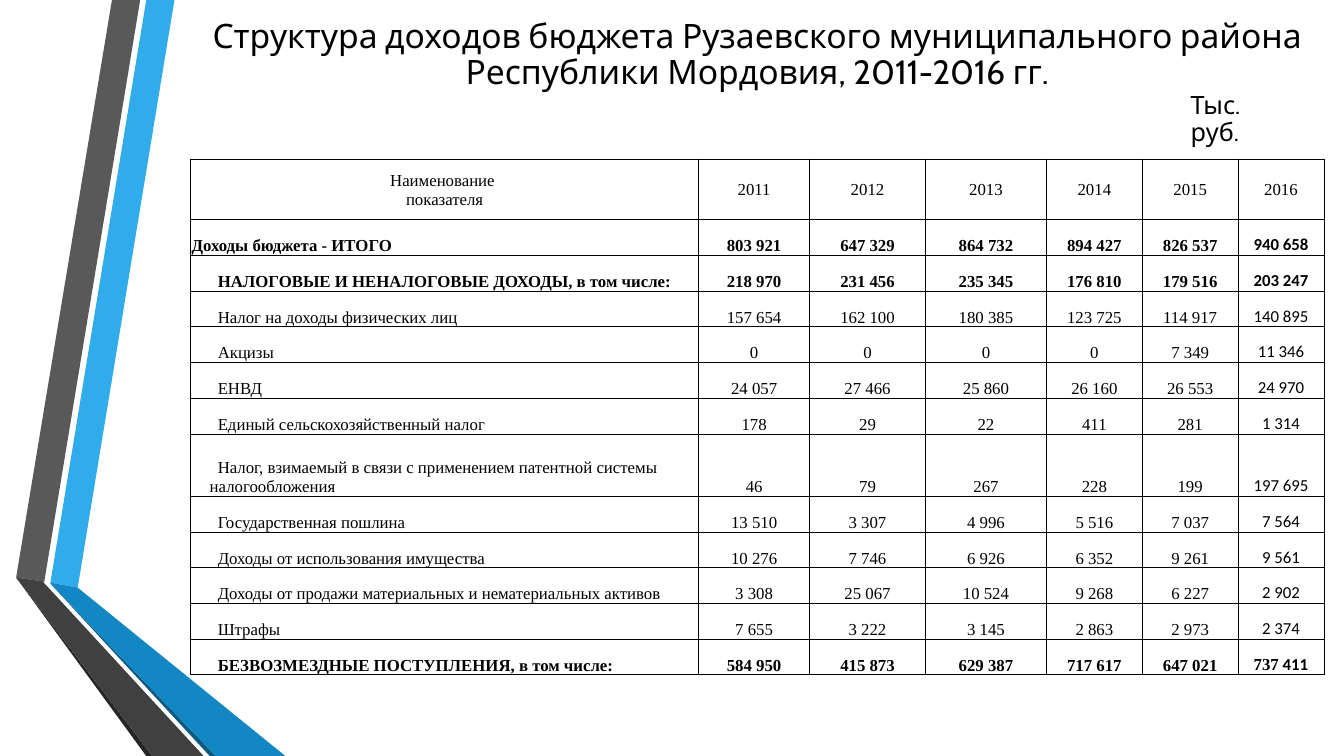
from lxml import etree
from pptx import Presentation
from pptx import util as u
from pptx.dml.color import RGBColor
from pptx.enum import text
from pptx.oxml import ns

# Lengths are columns and rows of a 100 x 100 grid laid over the slide
LEFT, WIDTH = 14.18, 84.32
BLACK = "000000"
SERIF, SANS, TITLE_FONT = "Times New Roman", "Calibri", "Cabin"

RIBBONS = [
    ("30ACEC", [(3.75, 77.07), (5.78, 77.73), (12.98, 0), (10.88, 0)]),
    ("595959", [(10.43, 0), (8.33, 0), (1.2, 76.4), (3.3, 76.93)]),
    ("262626", [(1.2, 76.4), (10.88, 100), (11.33, 100)]),
    ("0C5A82", [(3.75, 77.2), (15.6, 100), (16.05, 100)]),
    ("1287C3", [(3.75, 77.2), (16.05, 100), (21.23, 100), (5.78, 77.73), (3.75, 77.07)]),
    ("404040", [(15.15, 100), (3.6, 77.73), (3.23, 77.07), (3.3, 76.93), (1.2, 76.4), (11.33, 100)]),
]

YEARS = ["2011", "2012", "2013", "2014", "2015", "2016"]
TOTAL = "Доходы бюджета - ИТОГО"
TAXES = "НАЛОГОВЫЕ И НЕНАЛОГОВЫЕ ДОХОДЫ, в том числе:"
PATENT = "Налог, взимаемый в связи с применением патентной системы налогообложения"
GRANTS = "БЕЗВОЗМЕЗДНЫЕ ПОСТУПЛЕНИЯ, в том числе:"
INCOME = [
    (TOTAL, "803 921|647 329|864 732|894 427|826 537|940 658"),
    (TAXES, "218 970|231 456|235 345|176 810|179 516|203 247"),
    ("Налог на доходы физических лиц", "157 654|162 100|180 385|123 725|114 917|140 895"),
    ("Акцизы", "0|0|0|0|7 349|11 346"),
    ("ЕНВД", "24 057|27 466|25 860|26 160|26 553|24 970"),
    ("Единый сельскохозяйственный налог", "178|29|22|411|281|1 314"),
    (PATENT, "46|79|267|228|199|197 695"),
    ("Государственная пошлина", "13 510|3 307|4 996|5 516|7 037|7 564"),
    ("Доходы от использования имущества", "10 276|7 746|6 926|6 352|9 261|9 561"),
    ("Доходы от продажи материальных и нематериальных активов",
     "3 308|25 067|10 524|9 268|6 227|2 902"),
    ("Штрафы", "7 655|3 222|3 145|2 863|2 973|2 374"),
    (GRANTS, "584 950|415 873|629 387|717 617|647 021|737 411"),
]
COLUMNS = [37.81, 8.25, 8.63, 9, 7.13, 7.13, 6.38]
HEADER_ROW, PLAIN_ROW, TALL_ROW = 8, 4.72, 8.27


def color(value):
    return RGBColor.from_string(value)


class SlideBuilder:
    def __init__(self, deck):
        self.column = deck.slide_width / 100
        self.row = deck.slide_height / 100
        self.page = deck.slides.add_slide(deck.slide_layouts[5])

    def x(self, columns):
        return u.Emu(round(columns * self.column))

    def y(self, rows):
        return u.Emu(round(rows * self.row))

    def area(self, left, top, width, height):
        return self.x(left), self.y(top), self.x(width), self.y(height)

    def span(self, para, words, size, font, bold=False):
        span = para.add_run()
        span.text = words
        span.font.size = u.Pt(size)
        span.font.name = font
        span.font.bold = bold
        span.font.color.rgb = color(BLACK)

    def ribbon(self, group, fill, points):
        corners = [(self.x(across), self.y(down)) for across, down in points]
        outline = group.shapes.build_freeform(*corners[0])
        outline.add_line_segments(corners[1:], close=True)
        shape = outline.convert_to_shape()
        shape.shadow.inherit = False
        shape.fill.solid()
        shape.fill.fore_color.rgb = color(fill)
        shape.line.fill.background()

    def title(self, words, area):
        box = self.page.shapes.title
        box.left, box.top, box.width, box.height = self.area(*area)
        frame = box.text_frame
        frame.auto_size = text.MSO_AUTO_SIZE.NONE
        frame.vertical_anchor = text.MSO_ANCHOR.MIDDLE
        para = frame.paragraphs[0]
        para.alignment = text.PP_ALIGN.CENTER
        para.line_spacing = 0.9
        self.span(para, words, 24, TITLE_FONT)

    def label(self, words, area):
        frame = self.page.shapes.add_textbox(*self.area(*area)).text_frame
        frame.word_wrap = True
        frame.auto_size = text.MSO_AUTO_SIZE.SHAPE_TO_FIT_TEXT
        para = frame.paragraphs[0]
        para.line_spacing = 0.9
        self.span(para, words, 18, TITLE_FONT)

    def table(self, left, top, columns, rows):
        area = self.area(left, top, sum(columns), sum(rows))
        table = self.page.shapes.add_table(len(rows), len(columns), *area).table
        table.first_row = table.horz_banding = False
        for column, width in zip(table.columns, columns):
            column.width = self.x(width)
        for row, height in zip(table.rows, rows):
            row.height = self.y(height)
        return table

    def cell(self, cell, anchor, centered=True, indented=False):
        cell.margin_left = u.Inches(0.19 if indented else 0.01)
        cell.margin_top = cell.margin_right = u.Inches(0.01)
        cell.margin_bottom = 0
        cell.vertical_anchor = anchor
        self.borders(cell)
        cell.fill.background()
        para = cell.text_frame.paragraphs[0]
        para.alignment = text.PP_ALIGN.CENTER if centered else text.PP_ALIGN.LEFT
        if indented:
            para._p.get_or_add_pPr().set("indent", str(u.Inches(0.08)))
        return para

    def borders(self, cell):
        properties = cell._tc.get_or_add_tcPr()
        for side in ("a:lnL", "a:lnR", "a:lnT", "a:lnB"):
            line = etree.SubElement(properties, ns.qn(side), w=str(u.Pt(0.5)))
            fill = etree.SubElement(line, ns.qn("a:solidFill"))
            etree.SubElement(fill, ns.qn("a:srgbClr"), val=BLACK)


def main():
    deck = Presentation()
    deck.slide_width, deck.slide_height = u.Inches(13.33), u.Inches(7.5)
    slide = SlideBuilder(deck)

    # Folded ribbons on the left
    group = slide.page.shapes.add_group_shape()
    for fill, points in RIBBONS:
        slide.ribbon(group, fill, points)

    # Title and unit of measure
    slide.title("Структура доходов бюджета Рузаевского муниципального района "
                "Республики Мордовия, 2011-2016 гг.", (LEFT, 1.73, WIDTH, 11.2))
    slide.label("Тыс. руб.", (87.85, 11.6, 8.78, 5.33))

    # Table header
    rows = [HEADER_ROW] + [TALL_ROW if name == PATENT else PLAIN_ROW for name, _ in INCOME]
    table = slide.table(LEFT, 21.07, COLUMNS, rows)
    middle, bottom = text.MSO_ANCHOR.MIDDLE, text.MSO_ANCHOR.BOTTOM
    para = slide.cell(table.cell(0, 0), middle)
    slide.span(para, "Наименование ", 12, SERIF)
    para.add_line_break()
    slide.span(para, "показателя", 12, SERIF)
    for place, year in enumerate(YEARS, 1):
        slide.span(slide.cell(table.cell(0, place), middle), year, 12, SERIF)

    # Income rows, with the last year in the sans font
    for line, (name, amounts) in enumerate(INCOME, 1):
        bold = name in (TOTAL, TAXES, GRANTS)
        para = slide.cell(table.cell(line, 0), bottom, centered=False, indented=name != TOTAL)
        slide.span(para, name, 12, SERIF, bold)
        for place, amount in enumerate(amounts.split("|"), 1):
            para = slide.cell(table.cell(line, place), bottom)
            last = place == len(YEARS)
            if last and name == GRANTS:
                slide.span(para, amount[:3], 12, SERIF, bold)
                amount = amount[3:]
            slide.span(para, amount, 12, SANS if last else SERIF, bold)

    deck.save("out.pptx")


if __name__ == "__main__":
    main()
